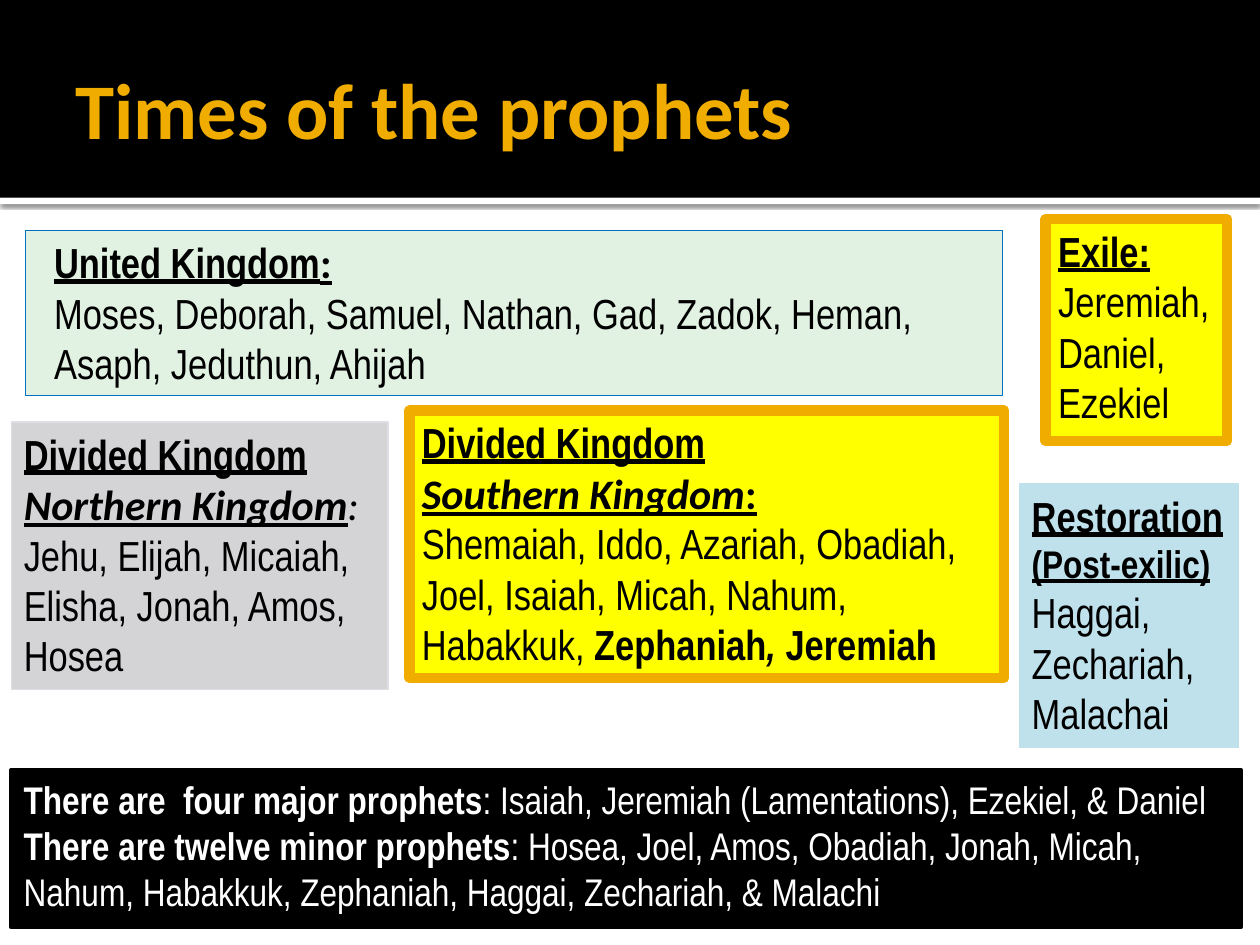
from lxml import etree
from pptx import Presentation
from pptx import util as u
from pptx.dml.color import RGBColor
from pptx.enum import shapes, text
from pptx.oxml import ns

PX = u.Inches(1) // 100  # 100 px to the inch

BLACK = RGBColor(0x00, 0x00, 0x00)
WHITE = RGBColor(0xFF, 0xFF, 0xFF)
GOLD = RGBColor(0xF0, 0xAD, 0x00)
YELLOW = RGBColor(0xFF, 0xFF, 0x00)
GREY = RGBColor(0xD4, 0xD4, 0xD6)
GREY_EDGE = RGBColor(0xDD, 0xDF, 0xE5)
SKY = RGBColor(0xBF, 0xE1, 0xEB)
MINT = RGBColor(0xE1, 0xF1, 0xE2)
BLUE = RGBColor(0x00, 0x70, 0xC0)

NARROW, CALIBRI = "Arial Narrow", "Calibri"

PLAIN = {}
BOLD = {"bold": True}
HEADING = {"bold": True, "underline": True}
KINGDOM = {**HEADING, "italic": True, "name": CALIBRI}


class Deck:
    def __init__(self, width, height):
        self.prs = Presentation()
        self.prs.slide_width, self.prs.slide_height = width * PX, height * PX
        self.slide = self.prs.slides.add_slide(self.prs.slide_layouts[6])

    def rect(self, box, fill, edge=None, weight=0.75):
        sp = self.slide.shapes.add_shape(
            shapes.MSO_SHAPE.RECTANGLE, *(n * PX for n in box))
        sp.shadow.inherit = False
        sp.fill.solid()
        sp.fill.fore_color.rgb = fill
        if edge is None:
            sp.line.fill.background()
        else:
            sp.line.color.rgb = edge
            sp.line.width = u.Pt(weight)
        return sp

    def drop_shadow(self, sp, blur, dist, alpha):
        """Give the shape a black shadow falling straight down."""
        effects = sp._element.spPr.find(ns.qn("a:effectLst"))
        shadow = etree.SubElement(
            effects, ns.qn("a:outerShdw"), blurRad=str(u.Pt(blur)),
            dist=str(u.Pt(dist)), dir="5400000", algn="t", rotWithShape="0")
        color = etree.SubElement(shadow, ns.qn("a:srgbClr"), val=str(BLACK))
        etree.SubElement(color, ns.qn("a:alpha"), val=str(alpha * 1000))

    def add_text(self, sp, paragraphs, color=BLACK, size=24, inset=10,
                 anchor=text.MSO_ANCHOR.TOP):
        """Fill the shape with paragraphs, each a list of (words, format)."""
        tf = sp.text_frame
        tf.word_wrap = True
        tf.margin_left = inset * PX
        tf.vertical_anchor = anchor
        for i, runs in enumerate(paragraphs):
            p = tf.paragraphs[0] if i == 0 else tf.add_paragraph()
            p.alignment = text.PP_ALIGN.LEFT
            for words, style in runs:
                r = p.add_run()
                r.text = words
                r.font.color.rgb = color
                values = {"name": NARROW, "size": u.Pt(size), **style}
                for key, value in values.items():
                    setattr(r.font, key, value)

    def title(self, box, words):
        sp = self.slide.shapes.add_textbox(*(n * PX for n in box))
        sp.text_frame.margin_right = 5 * PX
        self.add_text(sp, [[(words, {**BOLD, "name": CALIBRI})]], GOLD, 45,
                      anchor=text.MSO_ANCHOR.MIDDLE)

    def panel(self, box, fill, edge, weight, paragraphs, **layout):
        self.add_text(self.rect(box, fill, edge, weight), paragraphs, **layout)


def main():
    deck = Deck(1000, 750)

    rule = deck.rect((0, 157, 1000, 5), WHITE)
    deck.drop_shadow(rule, blur=2.5, dist=0.8, alpha=60)
    deck.rect((0, 0, 1000, 157), BLACK)
    deck.title((50, 17, 900, 137), "Times of the prophets")

    deck.panel((9, 335, 299, 212), GREY, GREY_EDGE, 0.75, [
        [("Divided Kingdom", HEADING)],
        [("Northern Kingdom", KINGDOM),
         (":", {"italic": True, "name": CALIBRI})],
        [("Jehu, Elijah, Micaiah,", PLAIN)],
        [("Elisha, Jonah, Amos,", PLAIN)],
        [("Hosea", PLAIN)],
    ])
    deck.panel((325, 326, 472, 212), YELLOW, GOLD, 6, [
        [("Divided Kingdom", HEADING)],
        [("Southern Kingdom", KINGDOM), (":", {**HEADING, "name": CALIBRI})],
        [("Shemaiah, Iddo, Azariah, Obadiah, Joel, Isaiah, Micah, Nahum, "
          "Habakkuk, ", PLAIN),
         ("Zephaniah", BOLD), (", ", {**BOLD, "italic": True}),
         ("Jeremiah", BOLD)],
    ])
    deck.panel((809, 384, 174, 209), SKY, SKY, 0.75, [
        [("Restoration", HEADING)],
        [("(Post-exilic)", {**HEADING, "size": u.Pt(22)})],
        [("Haggai, Zechariah, Malachai", PLAIN)],
    ])
    deck.panel((830, 174, 144, 176), YELLOW, GOLD, 6, [
        [("Exile:", HEADING)],
        [("Jeremiah, Daniel, Ezekiel", PLAIN)],
    ])
    deck.panel((20, 183, 776, 131), MINT, BLUE, 0.75, [
        [("United Kingdom", HEADING), (":", {**HEADING, "name": CALIBRI})],
        [("Moses, Deborah, Samuel, Nathan, Gad, Zadok, Heman, Asaph, "
          "Jeduthun, Ahijah", PLAIN)],
    ], inset=23)
    deck.panel((9, 611, 976, 125), BLACK, BLACK, 2.25, [
        [("There are  four major prophets", BOLD),
         (": Isaiah, Jeremiah (Lamentations), Ezekiel, & Daniel", PLAIN)],
        [("There are twelve minor prophets", BOLD),
         (": Hosea, Joel, Amos, Obadiah, Jonah, Micah, Nahum, Habakkuk, "
          "Zephaniah, Haggai, Zechariah, & Malachi", PLAIN)],
    ], color=WHITE, size=22)

    deck.prs.save("out.pptx")


if __name__ == "__main__":
    main()
